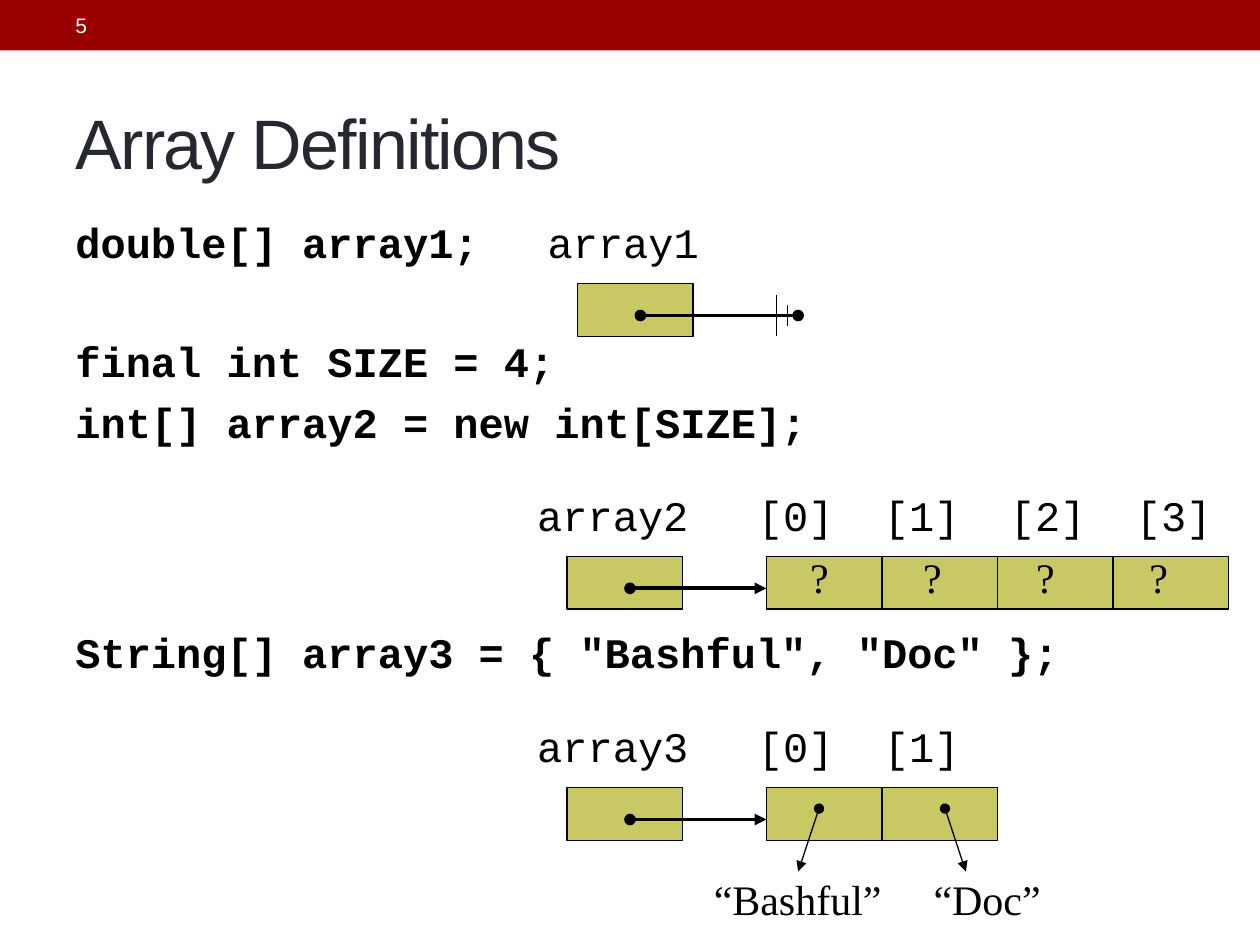
from dataclasses import dataclass

from lxml import etree
from pptx import Presentation
from pptx.dml.color import RGBColor
from pptx.enum import shapes, text
from pptx.oxml import ns
from pptx.util import Cm, Pt

BLACK, RED, OLIVE, SLATE, WHITE = "000000", "990000", "C8C864", "252731", "FFFFFF"
CODE_FONT, VALUE_FONT, TITLE_FONT = "Courier New", "Times New Roman", "Arial"
CELL_WIDTH, CELL_HEIGHT = 2.33, 1.06
ARROW_DROP = 0.64  # from the top of a cell to its arrow


@dataclass
class ArrayDiagram:
    name: str
    left: float
    top: float
    size: int = 0

    @property
    def cells_left(self) -> float:
        return self.left + 4.02

    @property
    def arrow_top(self) -> float:
        return self.top + ARROW_DROP


@dataclass
class CodeLine:
    words: str
    space_before: float


def color(value: str) -> RGBColor:
    return RGBColor.from_string(value)


def format_run(run, **formats) -> None:
    run.font.color.rgb = color(formats.pop("fill", BLACK))
    for name, value in formats.items():
        setattr(run.font, name, value)


def add_text(slide, words: str, left: float, top: float, width: float,
             height: float = 1.27, tab: float = 0, **formats):
    """Add a one-line text box, with equal tab stops if tab is given."""
    box = slide.shapes.add_textbox(Cm(left), Cm(top), Cm(width), Cm(height))
    box.text_frame.word_wrap = True
    paragraph = box.text_frame.paragraphs[0]
    run = paragraph.add_run()
    run.text = words
    format_run(run, **{"size": Pt(24), "name": CODE_FONT, **formats})
    if tab:
        stops = etree.SubElement(paragraph._p.get_or_add_pPr(), ns.qn("a:tabLst"))
        for step in range(1, words.count("\t") + 1):
            etree.SubElement(stops, ns.qn("a:tab"), pos=str(Cm(tab * step)), algn="l")
    return box


def add_box(slide, left: float, top: float, width: float, height: float,
            fill: str, outlined: bool = True) -> None:
    shape = slide.shapes.add_shape(shapes.MSO_SHAPE.RECTANGLE,
                                   Cm(left), Cm(top), Cm(width), Cm(height))
    shape.shadow.inherit = False
    shape.fill.solid()
    shape.fill.fore_color.rgb = color(fill)
    if outlined:
        shape.line.color.rgb = color(BLACK)
        shape.line.width = Pt(0.75)
    else:
        shape.line.fill.background()


def add_line(slide, start: tuple[float, float], end: tuple[float, float],
             width: float = 0.75, head: str = "none", tail: str = "none") -> None:
    line = slide.shapes.add_connector(shapes.MSO_CONNECTOR.STRAIGHT,
                                      *map(Cm, start), *map(Cm, end))
    line.line.color.rgb = color(BLACK)
    line.line.width = Pt(width)
    outline = line.line._get_or_add_ln()
    for tag, kind in (("a:headEnd", head), ("a:tailEnd", tail)):
        etree.SubElement(outline, ns.qn(tag), type=kind)
    etree.SubElement(line._element.spPr, ns.qn("a:effectLst"))


def add_array(slide, array: ArrayDiagram) -> None:
    """Draw the variable, its reference and the cells it points to."""
    add_box(slide, array.left, array.top, CELL_WIDTH, CELL_HEIGHT, OLIVE)
    add_text(slide, array.name, array.left - 0.85, array.top - 1.48, 4.87)
    for index in range(array.size):
        add_box(slide, array.cells_left + index * CELL_WIDTH, array.top,
                CELL_WIDTH, CELL_HEIGHT, OLIVE)
    if array.size:
        indexes = "\t".join(f"[{index}]" for index in range(array.size))
        add_text(slide, indexes, array.cells_left - 0.42, array.top - 1.48,
                 10.8, tab=2.54)
    reach, tail = (4.02, "triangle") if array.size else (4.45, "oval")
    add_line(slide, (array.left + 1.27, array.arrow_top),
             (array.left + reach, array.arrow_top), 2.25, "oval", tail)


def add_code(slide, lines: list[CodeLine]) -> None:
    box = slide.shapes.add_textbox(Cm(1.27), Cm(4.23), Cm(23.06), Cm(11.43))
    frame = box.text_frame
    frame.word_wrap = True
    for number, line in enumerate(lines):
        paragraph = frame.add_paragraph() if number else frame.paragraphs[0]
        paragraph.space_before = Pt(line.space_before)
        run = paragraph.add_run()
        run.text = line.words
        format_run(run, size=Pt(24), name=CODE_FONT, bold=True)


def add_title(slide, words: str) -> None:
    title = slide.shapes.title
    place = {"left": Cm(1.27), "top": Cm(1.48), "width": Cm(22.86), "height": Cm(2.75)}
    for name, value in place.items():
        setattr(title, name, value)
    title.text_frame.vertical_anchor = text.MSO_ANCHOR.MIDDLE
    paragraph = title.text_frame.paragraphs[0]
    paragraph.alignment = text.PP_ALIGN.LEFT
    run = paragraph.add_run()
    run.text = words
    format_run(run, size=Pt(40), name=TITLE_FONT, fill=SLATE)
    run._r.get_or_add_rPr().set("spc", "-100")


def main() -> None:
    presentation = Presentation()
    presentation.slide_width, presentation.slide_height = Cm(25.4), Cm(19.05)
    slide = presentation.slides.add_slide(presentation.slide_layouts[5])

    # Top band, page number and title
    add_box(slide, 0, 0, 25.4, 1.02, RED, outlined=False)
    number = add_text(slide, "5", 1.27, 0.05, 8.05, 0.91,
                      size=Pt(12), name=TITLE_FONT, fill=WHITE)
    number.text_frame.vertical_anchor = text.MSO_ANCHOR.MIDDLE
    add_title(slide, "Array Definitions")

    # Code, with room left for the diagrams
    add_code(slide, [
        CodeLine("double[] array1;", 0),
        CodeLine("final int SIZE = 4;", 39.2),
        CodeLine("int[] array2 = new int[SIZE];", 6.5),
        CodeLine('String[] array3 = { "Bashful", "Doc" };', 102.5),
    ])

    # Arrays
    null_array = ArrayDiagram("array1", 11.64, 5.72)
    int_array = ArrayDiagram("array2", 11.43, 11.22, 4)
    string_array = ArrayDiagram("array3", 11.43, 15.88, 2)
    for array in (null_array, int_array, string_array):
        add_array(slide, array)

    # Null mark at the end of the first reference
    for left, half in ((15.66, 0.42), (15.88, 0.21)):
        add_line(slide, (left, null_array.arrow_top - half),
                 (left, null_array.arrow_top + half))

    # Unset values of the second array
    add_text(slide, "\t".join("?" * int_array.size), 16.08, 11.0, 9.1,
             tab=2.28, name=VALUE_FONT)

    # Strings that the third array refers to
    add_text(slide, "“Bashful”\t“Doc”", 14.14, 17.48, 7.2, tab=4.43, name=VALUE_FONT)
    for start, end in ((16.51, 16.09), (19.05, 19.47)):
        add_line(slide, (start, 16.3), (end, 17.57), head="oval", tail="triangle")

    presentation.save("out.pptx")


if __name__ == "__main__":
    main()
